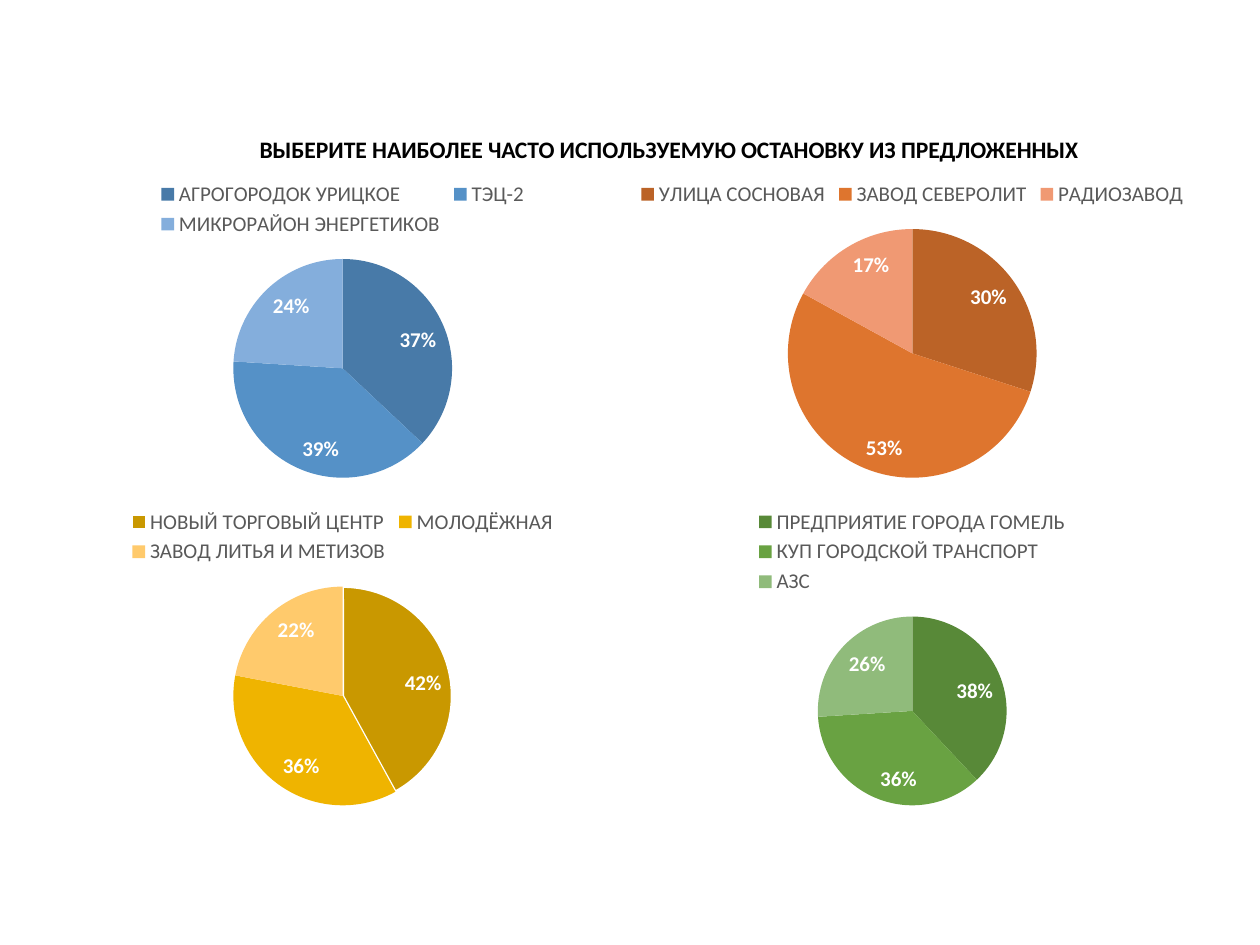
import pptx
import pptx.util
import pptx.chart.data
import pptx.dml.color
import pptx.enum.chart
import pptx.enum.text

Inches, Pt = pptx.util.Inches, pptx.util.Pt

TITLE = "ВЫБЕРИТЕ НАИБОЛЕЕ ЧАСТО ИСПОЛЬЗУЕМУЮ ОСТАНОВКУ ИЗ ПРЕДЛОЖЕННЫХ"
FONT = "Calibri"
COLORS = {"title": "000000", "legend": "595959", "label": "FFFFFF", "edge": "FFFFFF"}

# Each pie: (stop, percent, slice colour); the pies fill the grid row by row
PIES = [
    [("АГРОГОРОДОК УРИЦКОЕ", 37, "487AA8"),
     ("ТЭЦ-2", 39, "5591C7"),
     ("МИКРОРАЙОН ЭНЕРГЕТИКОВ", 24, "84AEDC")],
    [("УЛИЦА СОСНОВАЯ", 30, "BB6327"),
     ("ЗАВОД СЕВЕРОЛИТ", 53, "DE752E"),
     ("РАДИОЗАВОД", 17, "F09973")],
    [("НОВЫЙ ТОРГОВЫЙ ЦЕНТР", 42, "C99800"),
     ("МОЛОДЁЖНАЯ", 36, "EFB400"),
     ("ЗАВОД ЛИТЬЯ И МЕТИЗОВ", 22, "FFCA6C")],
    [("ПРЕДПРИЯТИЕ ГОРОДА ГОМЕЛЬ", 38, "588938"),
     ("КУП ГОРОДСКОЙ ТРАНСПОРТ", 36, "69A242"),
     ("АЗС", 26, "90BB7B")],
]
EDGED = (2, 0)  # pie and slice with a white outline
LEFT, TOP, WIDTH, HEIGHT = 0.17, 1.33, 5.1, 2.6
STEP = 4.52  # the columns overlap slightly


def style(font, size, color, bold=False):
    font.name, font.size, font.bold = FONT, Pt(size), bold
    font.color.rgb = pptx.dml.color.RGBColor.from_string(color)


def add_title(slide):
    title = slide.shapes.title
    title.left, title.top = Inches(1.96), Inches(1.02)
    title.width, title.height = Inches(6.78), Inches(0.33)
    frame = title.text_frame
    frame.text = TITLE
    frame.word_wrap = False
    frame.auto_size = pptx.enum.text.MSO_AUTO_SIZE.NONE
    frame.vertical_anchor = pptx.enum.text.MSO_ANCHOR.MIDDLE
    para = frame.paragraphs[0]
    para.alignment = pptx.enum.text.PP_ALIGN.LEFT
    style(para.font, 13.5, COLORS["title"], True)


def add_pie(slide, index, stops):
    row, col = divmod(index, 2)
    data = pptx.chart.data.CategoryChartData()
    data.categories = [name for name, _, _ in stops]
    data.add_series("Series 1", [share for _, share, _ in stops])
    chart = slide.shapes.add_chart(
        pptx.enum.chart.XL_CHART_TYPE.PIE,
        Inches(LEFT + col * STEP), Inches(TOP + row * HEIGHT),
        Inches(WIDTH), Inches(HEIGHT), data).chart
    chart.has_title = False
    style(chart.font, 10, COLORS["title"])

    chart.has_legend = True
    chart.legend.position = pptx.enum.chart.XL_LEGEND_POSITION.TOP
    chart.legend.include_in_layout = False
    style(chart.legend.font, 12, COLORS["legend"])

    plot = chart.plots[0]
    plot.vary_by_categories = True
    for number, (_, _, color) in enumerate(stops):
        form = plot.series[0].points[number].format
        form.fill.solid()
        form.fill.fore_color.rgb = pptx.dml.color.RGBColor.from_string(color)
        if (index, number) == EDGED:
            form.line.width = Pt(1.5)
            form.line.color.rgb = pptx.dml.color.RGBColor.from_string(COLORS["edge"])
        else:
            form.line.fill.background()

    labels = plot.series[0].data_labels
    labels.show_percentage = True
    labels.show_value = False
    labels.number_format, labels.number_format_is_linked = "0%", False
    labels.position = pptx.enum.chart.XL_LABEL_POSITION.INSIDE_END
    style(labels.font, 12, COLORS["label"], True)


def main():
    deck = pptx.Presentation()
    deck.slide_width, deck.slide_height = Inches(10), Inches(7.5)
    slide = deck.slides.add_slide(deck.slide_layouts[5])
    add_title(slide)
    for index, stops in enumerate(PIES):
        add_pie(slide, index, stops)
    deck.save("out.pptx")


if __name__ == "__main__":
    main()
